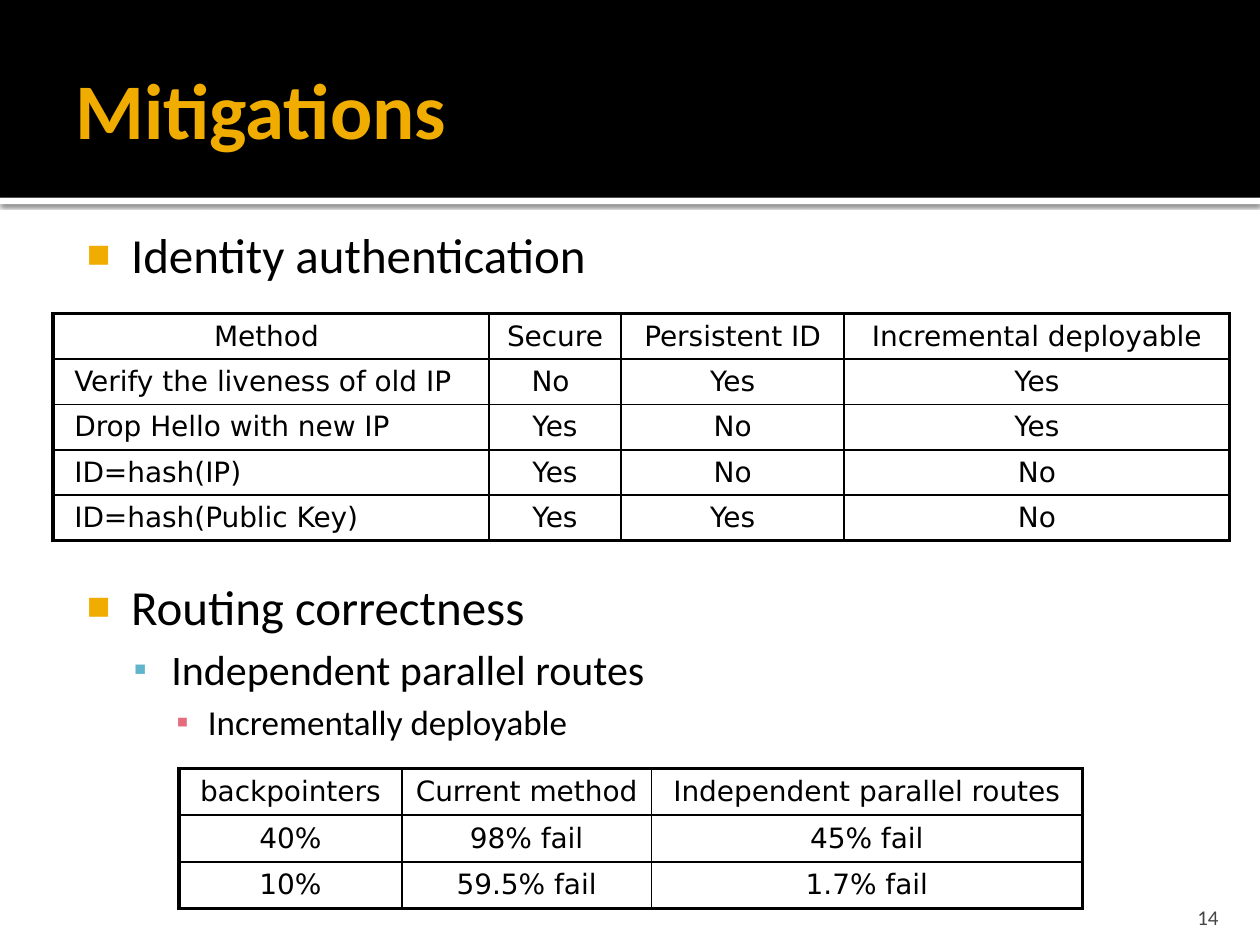
"""Build the Mitigations slide with two comparison tables."""
import pptx
import pptx.util
import pptx.dml.color
import pptx.enum.shapes
import pptx.enum.text
import pptx.oxml
import pptx.oxml.ns

Inches = pptx.util.Inches
Pt = pptx.util.Pt
Align = pptx.enum.text.PP_ALIGN
Anchor = pptx.enum.text.MSO_ANCHOR
NAMESPACE = pptx.oxml.ns.nsdecls("a")


def rgb(color):
    """Turn a hex string into a colour."""
    return pptx.dml.color.RGBColor.from_string(color)


def style(para, size, color="000000", name="Calibri", bold=False):
    """Set the font of a whole paragraph."""
    para.font.size = Pt(size)
    para.font.name = name
    para.font.bold = bold
    para.font.color.rgb = rgb(color)


deck = pptx.Presentation()
deck.slide_width, deck.slide_height = Inches(10), Inches(7.5)
page = deck.slides.add_slide(deck.slide_layouts[1])

bars = [(1.57, 0.05, "FFFFFF"), (0, 1.57, "000000")]
for position, (top, height, color) in enumerate(bars):
    bar = page.shapes.add_shape(pptx.enum.shapes.MSO_SHAPE.RECTANGLE,
                                0, Inches(top), Inches(10), Inches(height))
    bar.shadow.inherit = False
    bar.fill.solid()
    bar.fill.fore_color.rgb = rgb(color)
    bar.line.fill.background()
    page.shapes._spTree.insert(2 + position, bar._element)
    if color == "FFFFFF":
        effects = bar._element.spPr.find(pptx.oxml.ns.qn("a:effectLst"))
        effects.append(pptx.oxml.parse_xml(
            f'<a:outerShdw {NAMESPACE} blurRad="{Pt(2.5)}" dist="{Pt(0.8)}" dir="5400000">'
            '<a:srgbClr val="000000"><a:alpha val="60000"/></a:srgbClr></a:outerShdw>'))

title = page.shapes.title
body = page.placeholders[1]
number = page.shapes.add_textbox(Inches(8.97), Inches(7.08), Inches(0.8), Inches(0.3))
frames = [
    (title, (0.5, 0.17, 9, 1.37), (0.1, 0.05, 0.05, 0.05), Anchor.MIDDLE),
    (body, (0.5, 1.68, 9, 5.32), (0.06, 0.1, 0.1, 0.05), Anchor.TOP),
    (number, (8.97, 7.08, 0.8, 0.3), (0.1, 0.05, 0.1, 0), Anchor.BOTTOM),
]
for box, place, insets, anchor in frames:
    box.left, box.top, box.width, box.height = map(Inches, place)
    frame = box.text_frame
    frame.word_wrap = True
    frame.auto_size = pptx.enum.text.MSO_AUTO_SIZE.NONE
    frame.vertical_anchor = anchor
    (frame.margin_left, frame.margin_top,
     frame.margin_right, frame.margin_bottom) = map(Inches, insets)

for box, text, size, color, align in [(title, "Mitigations", 45, "F0AD00", Align.LEFT),
                                      (number, "14", 12, "454545", Align.RIGHT)]:
    para = box.text_frame.paragraphs[0]
    para.text = text
    para.alignment = align
    style(para, size, color, bold=box is title)

levels = [
    (28, 0.48, -0.35, "■", "F0AD00", 80),
    (24, 0.8, -0.3, "▪", "60B5CC", 90),
    (20, 1.09, -0.25, "▪", "E66C7D", 100),
]
points = [
    ("Identity authentication", 0, 0),
    ("Routing correctness", 0, 167.5),
    ("Independent parallel routes", 1, 4.8),
    ("Incrementally deployable", 2, 4),
]
body.text_frame.text = "\n".join(text for text, level, gap in points)
for para, (text, level, gap) in zip(body.text_frame.paragraphs, points):
    size, margin, indent, bullet, color, percent = levels[level]
    para.level = level
    para.space_before = Pt(gap)
    properties = para._p.get_or_add_pPr()
    properties.set("marL", str(Inches(margin)))
    properties.set("indent", str(Inches(indent)))
    for xml in (f'<a:buClr {NAMESPACE}><a:srgbClr val="{color}"/></a:buClr>',
                f'<a:buSzPct {NAMESPACE} val="{percent * 1000}"/>',
                f'<a:buChar {NAMESPACE} char="{bullet}"/>'):
        properties.append(pptx.oxml.parse_xml(xml))
    style(para, size)

methods = [
    ["Method ", "Secure", "Persistent ID", "Incremental deployable"],
    ["Verify the liveness of old IP", "No ", "Yes", "Yes"],
    ["Drop Hello with new IP", "Yes", "No", "Yes"],
    ["ID=hash(IP)", "Yes", "No", "No"],
    ["ID=hash(Public Key)", "Yes", "Yes", "No"],
]
failures = [
    ["backpointers", "Current method", "Independent parallel routes"],
    ["40%", "98% fail", "45% fail"],
    ["10%", "59.5% fail", "1.7% fail"],
]
tables = [
    (methods, 0.42, 2.49, [3.46, 1.05, 1.77, 3.06], 0.36),
    (failures, 1.42, 6.1, [1.77, 1.98, 3.42], 0.37),
]
for rows, left, top, widths, height in tables:
    table = page.shapes.add_table(len(rows), len(widths), Inches(left), Inches(top),
                                  Inches(sum(widths)), Inches(height * len(rows))).table
    table.first_row = table.horz_banding = False
    for column, width in zip(table.columns, widths):
        column.width = Inches(width)
    for r, row in enumerate(rows):
        table.rows[r].height = Inches(height)
        for c, text in enumerate(row):
            cell = table.cell(r, c)
            cell.text = text
            cell.vertical_anchor = Anchor.MIDDLE
            cell.fill.background()
            para = cell.text_frame.paragraphs[0]
            para.alignment = Align.CENTER
            if rows is methods and c == 0 and r > 0:
                para.alignment = Align.LEFT
                cell.margin_left = Inches(0.17)
            style(para, 16, name="DejaVu Sans")
            outer = [("L", c == 0), ("R", c == len(widths) - 1),
                     ("T", r == 0), ("B", r == len(rows) - 1)]
            for order, (side, is_outer) in enumerate(outer):
                weight = Pt(2.25 if is_outer else 1)
                cell._tc.get_or_add_tcPr().insert(order, pptx.oxml.parse_xml(
                    f'<a:ln{side} {NAMESPACE} w="{weight}"><a:solidFill>'
                    f'<a:srgbClr val="000000"/></a:solidFill></a:ln{side}>'))

deck.save("out.pptx")
